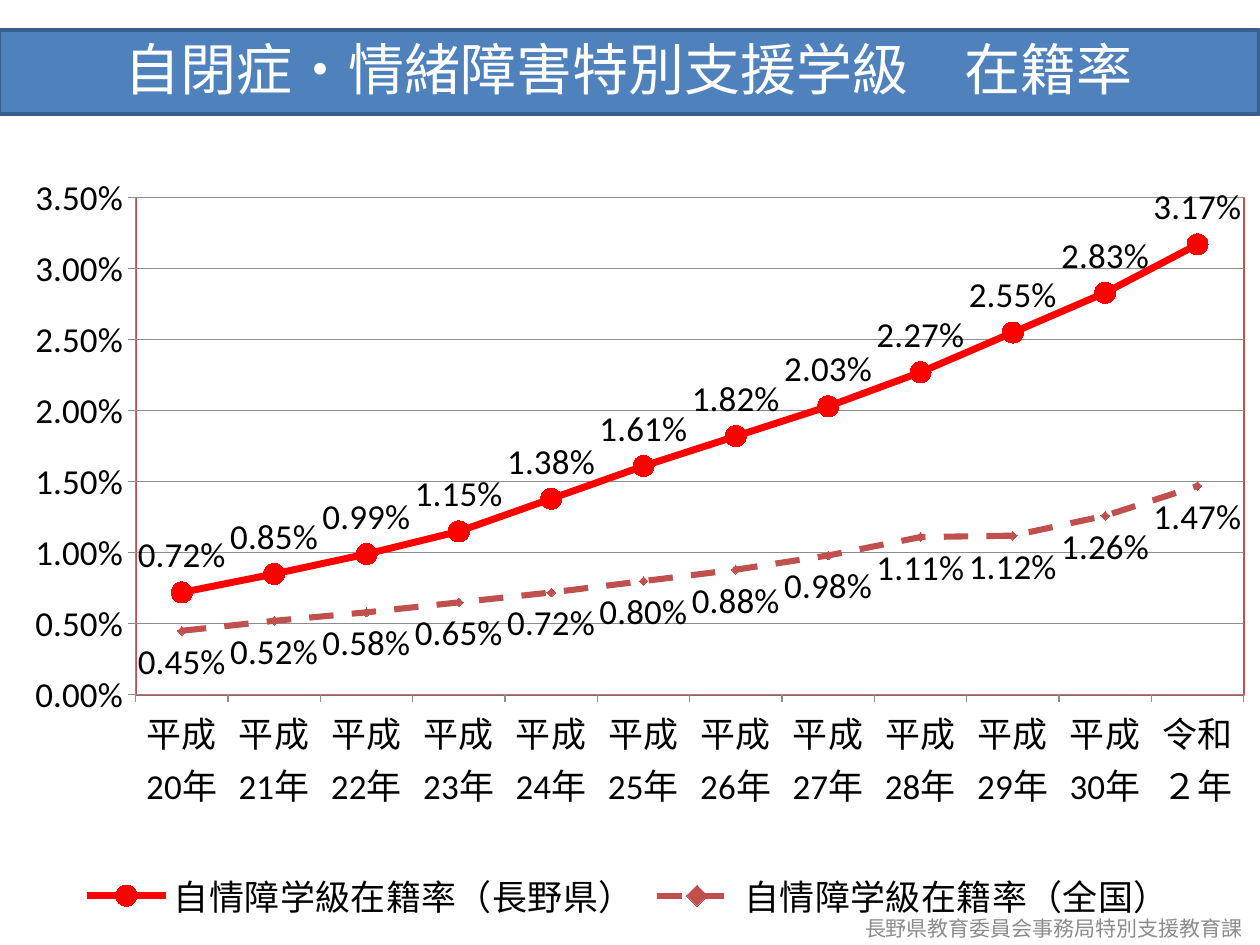
"""Build a slide with a line chart of class enrolment rates by year."""
import pptx
import pptx.chart.data
import pptx.dml.color
import pptx.enum.chart
import pptx.enum.dml
import pptx.enum.text
import pptx.oxml
import pptx.util

Pt = pptx.util.Pt
RGBColor = pptx.dml.color.RGBColor
Mark = pptx.enum.chart.XL_MARKER_STYLE
Place = pptx.enum.chart.XL_LABEL_POSITION
Dash = pptx.enum.dml.MSO_LINE

WHITE = RGBColor(0xFF, 0xFF, 0xFF)
BLACK = RGBColor(0, 0, 0)
BLUE = RGBColor(0x4F, 0x81, 0xBD)
NAVY = RGBColor(0x3A, 0x5F, 0x8C)
RED = RGBColor(0xFF, 0, 0)
BRICK = RGBColor(0xC0, 0x50, 0x4D)
GRAY = RGBColor(0x8C, 0x8C, 0x8C)

TITLE = "自閉症・情緒障害特別支援学級　在籍率"
SOURCE = "長野県教育委員会事務局特別支援教育課"
YEARS = [f"平成{year}年" for year in range(20, 31)] + ["令和２年"]
SERIES = [
    {"name": "自情障学級在籍率（長野県）", "color": RED, "width": 4, "dash": Dash.SOLID,
     "mark": Mark.CIRCLE, "size": 12, "place": Place.ABOVE,
     "rates": [0.72, 0.85, 0.99, 1.15, 1.38, 1.61, 1.82, 2.03, 2.27, 2.55, 2.83, 3.17]},
    {"name": "自情障学級在籍率（全国）", "color": BRICK, "width": 3.5, "dash": Dash.DASH,
     "mark": Mark.DIAMOND, "size": 5, "place": Place.BELOW,
     "rates": [0.45, 0.52, 0.58, 0.65, 0.72, 0.80, 0.88, 0.98, 1.11, 1.12, 1.26, 1.47]},
]
PLOT = {"x": 0.1, "y": 0.03, "w": 0.9, "h": 0.66}
FORMAT = "0.00%"


def write(shape, text, size, color, face, spacing=1.0):
    frame = shape.text_frame
    frame.auto_size = pptx.enum.text.MSO_AUTO_SIZE.NONE
    frame.word_wrap = True
    frame.vertical_anchor = pptx.enum.text.MSO_ANCHOR.MIDDLE
    para = frame.paragraphs[0]
    para.alignment = pptx.enum.text.PP_ALIGN.CENTER
    para.line_spacing = spacing
    run = para.add_run()
    run.text = text
    run.font.size, run.font.name = Pt(size), face
    run.font.color.rgb = color
    east = pptx.oxml.parse_xml(
        '<a:ea xmlns:a="http://schemas.openxmlformats.org/drawingml/2006/main"'
        ' typeface="Noto Sans CJK JP"/>')
    run.font.latin = None
    run.font._element.append(east)


def style(line, color, width, dash=Dash.SOLID):
    line.color.rgb = color
    line.width = Pt(width)
    line.dash_style = dash


def frame_plot(chart):
    area = chart._chartSpace.chart.plotArea
    for old in area.findall(pptx.oxml.ns.qn("c:layout")):
        area.remove(old)
    sides = "".join(f'<c:{key}Mode val="edge"/>' for key in "xy")
    sizes = "".join(f'<c:{key} val="{value}"/>' for key, value in PLOT.items())
    area.insert(0, pptx.oxml.parse_xml(
        '<c:layout xmlns:c="http://schemas.openxmlformats.org/drawingml/2006/chart">'
        f'<c:manualLayout><c:layoutTarget val="inner"/>{sides}{sizes}'
        '</c:manualLayout></c:layout>'))
    area.append(pptx.oxml.parse_xml(
        '<c:spPr xmlns:c="http://schemas.openxmlformats.org/drawingml/2006/chart"'
        ' xmlns:a="http://schemas.openxmlformats.org/drawingml/2006/main"><a:noFill/>'
        f'<a:ln w="{Pt(1)}"><a:solidFill><a:srgbClr val="{BRICK}"/></a:solidFill>'
        '</a:ln></c:spPr>'))


def add_graph(slide):
    data = pptx.chart.data.CategoryChartData(number_format=FORMAT)
    data.categories = YEARS
    for item in SERIES:
        data.add_series(item["name"], [round(rate / 100, 4) for rate in item["rates"]])
    chart = slide.shapes.add_chart(
        pptx.enum.chart.XL_CHART_TYPE.LINE_MARKERS,
        Pt(7.2), Pt(100), Pt(704), Pt(430.5), data).chart
    chart.has_title = False
    chart.font.size, chart.font.name = Pt(20), "Calibri"
    chart.font.color.rgb = BLACK
    chart.has_legend = True
    chart.legend.position = pptx.enum.chart.XL_LEGEND_POSITION.BOTTOM
    chart.legend.include_in_layout = False
    chart.legend.font.size = Pt(20)

    rates = chart.value_axis
    rates.minimum_scale, rates.maximum_scale, rates.major_unit = 0, 0.035, 0.005
    rates.tick_labels.number_format = FORMAT
    rates.tick_labels.number_format_is_linked = False
    style(rates.major_gridlines.format.line, GRAY, 0.75)
    for axis in (rates, chart.category_axis):
        axis.major_tick_mark = pptx.enum.chart.XL_TICK_MARK.OUTSIDE
        axis.tick_labels.font.size = Pt(20)
        style(axis.format.line, GRAY, 0.75)

    for line, item in zip(chart.plots[0].series, SERIES):
        line.smooth = False
        style(line.format.line, item["color"], item["width"], item["dash"])
        mark = line.marker
        mark.style, mark.size = item["mark"], item["size"]
        mark.format.fill.solid()
        mark.format.fill.fore_color.rgb = item["color"]
        mark.format.line.color.rgb = item["color"]
        tags = line.data_labels
        tags.show_value = True
        tags.position = item["place"]
        tags.number_format, tags.number_format_is_linked = FORMAT, False
        tags.font.size = Pt(20)
    frame_plot(chart)


def main():
    deck = pptx.Presentation()
    deck.slide_width, deck.slide_height = Pt(720), Pt(540)
    slide = deck.slides.add_slide(deck.slide_layouts[5])
    add_graph(slide)

    title = slide.shapes.title
    title.left, title.top, title.width, title.height = Pt(-0.5), Pt(17.3), Pt(720), Pt(48)
    title.fill.solid()
    title.fill.fore_color.rgb = BLUE
    style(title.line, NAVY, 2)
    write(title, TITLE, size=32, color=WHITE, face="Noto Sans CJK JP", spacing=0.9)

    note = slide.shapes.add_textbox(Pt(467.3), Pt(516.2), Pt(270), Pt(28.8))
    write(note, SOURCE, size=12, color=GRAY, face="Calibri")
    deck.save("out.pptx")


if __name__ == "__main__":
    main()
